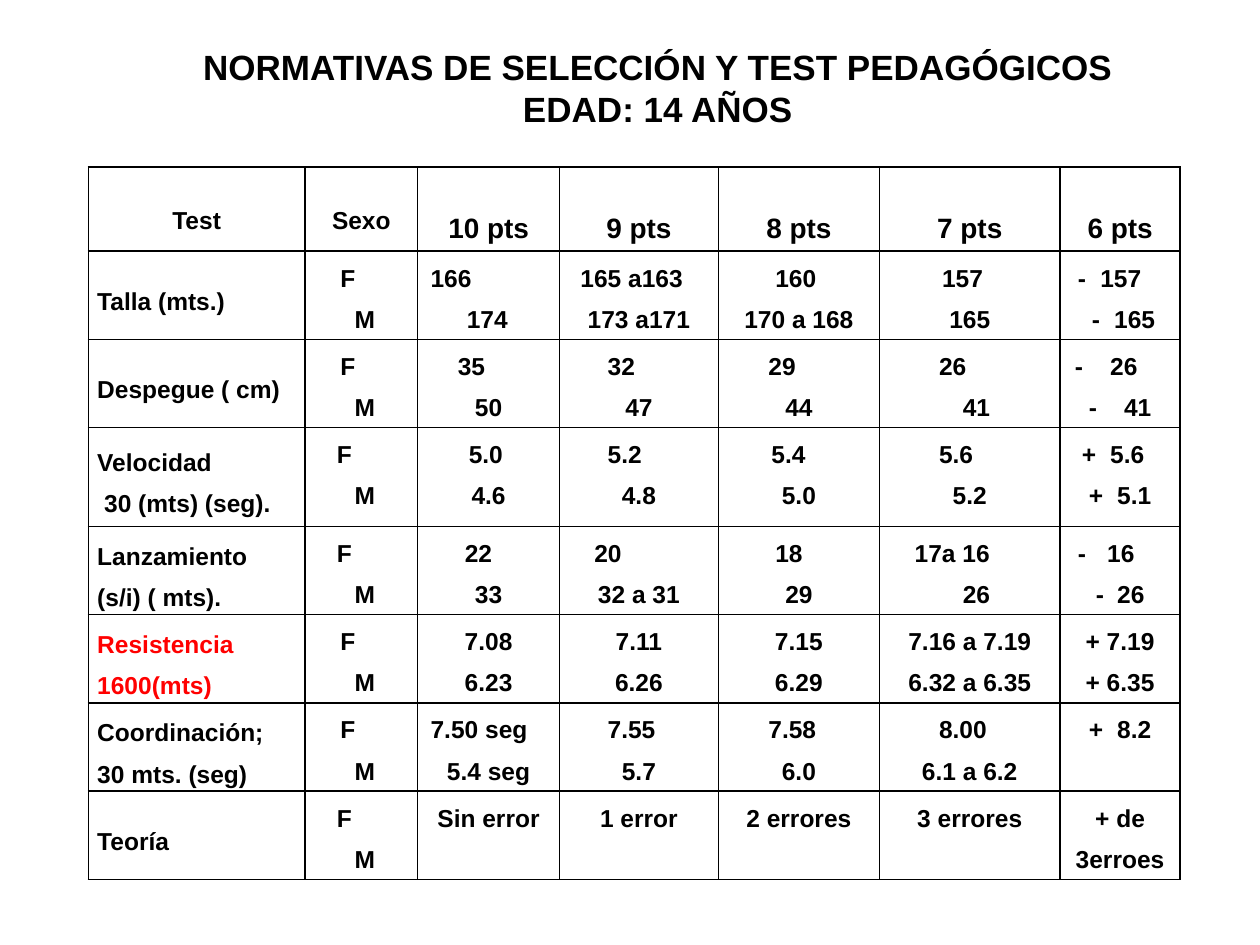
from pptx import Presentation
from pptx.dml.color import RGBColor
from pptx.enum.text import MSO_ANCHOR as Anchor, PP_ALIGN as Align
from pptx.oxml import parse_xml
from pptx.oxml.ns import nsdecls
from pptx.util import Cm, Pt

BLACK = RGBColor(0, 0, 0)
WHITE = RGBColor(255, 255, 255)
RED = RGBColor(255, 0, 0)

COLUMN_WIDTHS = [4.37, 2.27, 2.86, 3.2, 3.25, 3.64, 2.42]
HEADER_HEIGHT, ROW_HEIGHT, TALL_HEIGHT = 1.69, 1.78, 1.99
HEADINGS = ["Test", "Sexo", "10 pts", "9 pts", "8 pts", "7 pts", "6 pts"]
MALE = ("M", 0.82)

TESTS = [
    ([("Talla (mts.)", 0)], 0.53,
     [("166", 0.08), ("174", 0.81)], [("165 a163", 0.24), "173 a171"],
     [("160", 0.97), "170 a 168"], [("157", 1.08), "165"],
     [("-\t157", 0.63, 0.18), ("-\t165", 0.91, 0.46)]),
    ([("Despegue ( cm)", 0)], 0.53,
     [("35", 0.63), "50"], [("32", 0.79), "47"],
     [("29", 0.83), "44"], [("26", 1.02), ("41", 1.5)],
     [("-\t26", 0.83, 0.12), ("-\t41", 1.11, 0.4)]),
    ([("Velocidad", 0), ("30 (mts) (seg).", 0.14)], 0.46,
     [("5.0", 0.85), "4.6"], [("5.2", 0.79), "4.8"],
     [("5.4", 0.89), "5.0"], [("5.6", 1.02), "5.2"],
     [("+\t5.6", 0.83, 0.26), ("+\t5.1", 0.97, 0.4)]),
    ([("Lanzamiento (s/i) ( mts).", 0)], 0.46,
     [("22", 0.77), "33"], [("20", 0.52), "32 a 31"],
     [("18", 0.97), "29"], [("17a 16", 0.53), ("26", 1.5)],
     [("-\t16", 0.77, 0.18), ("-\t26", 0.97, 0.54)]),
    ([("Resistencia 1600(mts)", 0)], 0.53,
     ["7.08", "6.23"], ["7.11", "6.26"], ["7.15", "6.29"],
     ["7.16 a 7.19", "6.32 a 6.35"], ["+ 7.19", "+ 6.35"]),
    ([("Coordinación;", 0), ("30 mts. (seg)", 0)], 0.53,
     [("7.50 seg", 0.08), "5.4 seg"], [("7.55", 0.79), "5.7"],
     [("7.58", 0.83), "6.0"], [("8.00", 1.02), "6.1 a 6.2"],
     [("+\t8.2", 0.97, 0.4)]),
    ([("Teoría", 0)], 0.46,
     ["Sin error"], ["1 error"], ["2 errores"], ["3 errores"], ["+ de 3erroes"]),
]


class SlideBuilder:
    """Holds the text style and the slide being filled."""

    def __init__(self, slide, font_name="Arial"):
        self.slide = slide
        self.font_name = font_name

    def style(self, paragraph, size, color=BLACK):
        font = paragraph.font
        font.name, font.size, font.bold = self.font_name, Pt(size), True
        font.color.rgb = color

    def indent(self, paragraph, left, start=None):
        properties = paragraph._p.get_or_add_pPr()
        properties.set("marL", str(Cm(left)))
        properties.set("indent", str(Cm(left if start is None else start) - Cm(left)))

    def title(self, lines, left, top, width, height):
        title = self.slide.shapes.title
        title.left, title.top, title.width, title.height = map(Cm, (left, top, width, height))
        frame = title.text_frame
        frame.word_wrap = True
        frame.vertical_anchor = Anchor.MIDDLE
        frame.text = "\n".join(lines)
        for paragraph in frame.paragraphs:
            paragraph.alignment = Align.CENTER
            paragraph.space_before = Pt(0)
            self.style(paragraph, 20)
        self.indent(frame.paragraphs[0], 0.4)

    def table(self, left, top, widths, heights):
        frame = self.slide.shapes.add_table(
            len(heights), len(widths), Cm(left), Cm(top), Cm(sum(widths)), Cm(sum(heights)))
        table = frame.table
        table.first_row = table.horz_banding = False
        for column, width in zip(table.columns, widths):
            column.width = Cm(width)
        for row, height in zip(table.rows, heights):
            row.height = Cm(height)
        return table

    def cell(self, cell, lines, size=14, color=BLACK, anchor=Anchor.TOP, bottom=0):
        cell.margin_left = cell.margin_right = Cm(0.18)
        cell.margin_top, cell.margin_bottom = 0, Cm(bottom)
        cell.vertical_anchor = anchor
        properties = cell._tc.get_or_add_tcPr()
        for side in "LRTB":
            properties.append(parse_xml(
                f'<a:ln{side} {nsdecls("a")} w="{Pt(1)}"><a:solidFill>'
                f'<a:srgbClr val="{BLACK}"/></a:solidFill></a:ln{side}>'))
        cell.fill.solid()
        cell.fill.fore_color.rgb = WHITE
        specs = [(line,) if isinstance(line, str) else line for line in lines]
        cell.text_frame.text = "\n".join(spec[0] for spec in specs)
        for paragraph, (_, *indents) in zip(cell.text_frame.paragraphs, specs):
            paragraph.line_spacing = 1.5
            paragraph.alignment = Align.LEFT if indents else Align.CENTER
            if indents:
                self.indent(paragraph, *indents)
            self.style(paragraph, size, color)


def main():
    deck = Presentation()
    deck.slide_width, deck.slide_height = Cm(25.4), Cm(19.05)
    builder = SlideBuilder(deck.slides.add_slide(deck.slide_layouts[5]))
    builder.title(["NORMATIVAS DE SELECCIÓN Y TEST PEDAGÓGICOS", "EDAD: 14 AÑOS"],
                  3.06, 0.79, 20, 1.96)

    heights = [HEADER_HEIGHT] + [
        TALL_HEIGHT if test[0][0][0] == "Velocidad" else ROW_HEIGHT for test in TESTS]
    norms = builder.table(1.78, 3.37, COLUMN_WIDTHS, heights)
    for column, heading in enumerate(HEADINGS):
        size, bottom = (16, 0.14) if "pts" in heading else (14, 0.33)
        builder.cell(norms.cell(0, column), [heading], size, anchor=Anchor.BOTTOM, bottom=bottom)
    for row, (name, female_indent, *scores) in enumerate(TESTS, 1):
        color = RED if name[0][0].startswith("Resistencia") else BLACK
        builder.cell(norms.cell(row, 0), name, color=color, anchor=Anchor.MIDDLE)
        for column, lines in enumerate([[("F", female_indent), MALE], *scores], 1):
            builder.cell(norms.cell(row, column), lines)
    deck.save("out.pptx")


if __name__ == "__main__":
    main()
